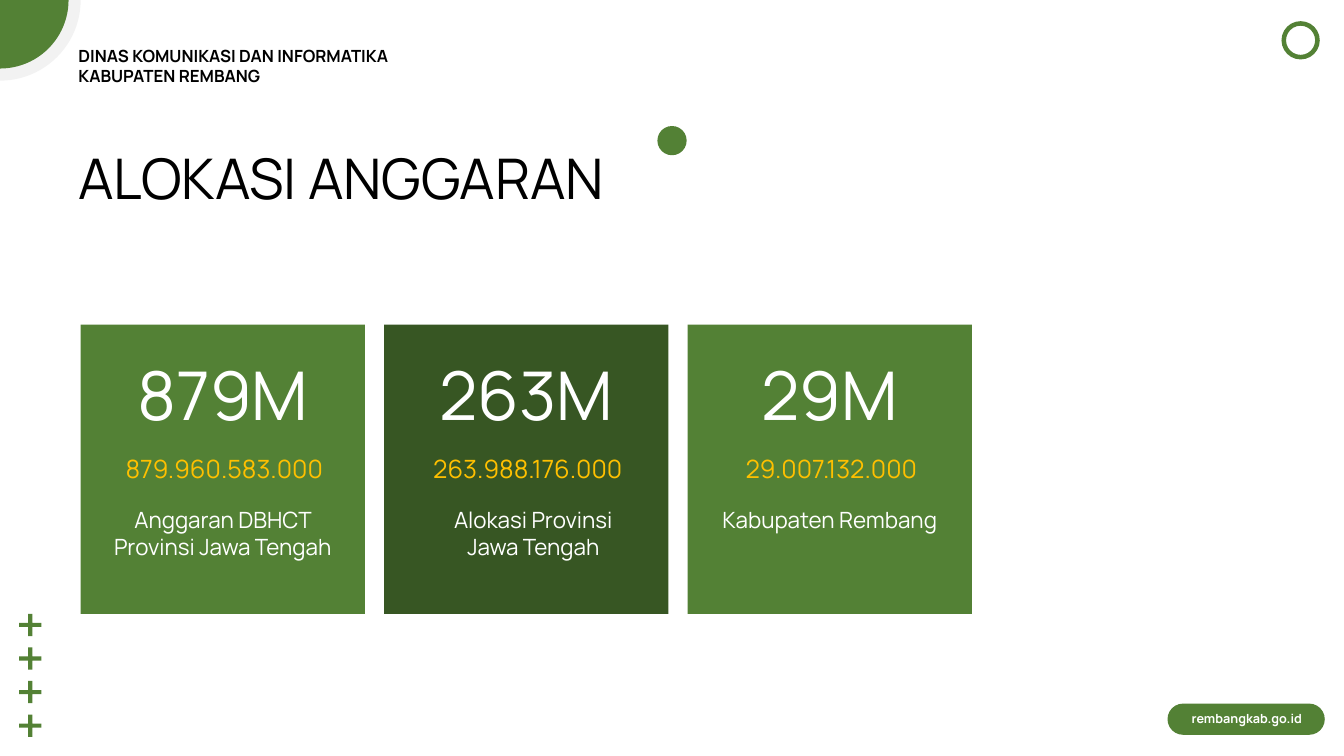
from pptx import Presentation
from pptx.dml.color import RGBColor
from pptx.enum.shapes import MSO_SHAPE
from pptx.enum.text import MSO_AUTO_SIZE, PP_ALIGN
from pptx.util import Inches, Pt

RECTANGLE, PIE, DONUT = MSO_SHAPE.RECTANGLE, MSO_SHAPE.PIE, MSO_SHAPE.DONUT
PLUS, OVAL, PILL = MSO_SHAPE.CROSS, MSO_SHAPE.OVAL, MSO_SHAPE.ROUNDED_RECTANGLE
LEFT, CENTER = PP_ALIGN.LEFT, PP_ALIGN.CENTER
FIT_SHAPE = MSO_AUTO_SIZE.SHAPE_TO_FIT_TEXT

# Content
FONT = "Manrope"
GREEN, DARK_GREEN, GOLD = "538135", "375623", "FFC000"
WHITE, BLACK, PALE_GRAY = "FFFFFF", "000000", "F2F2F2"
AGENCY = ["DINAS KOMUNIKASI DAN INFORMATIKA", "KABUPATEN REMBANG"]
TITLE = ["ALOKASI ANGGARAN"]
WEBSITE = ["rembangkab.go.id"]
# Fill, headline, full amount, caption lines, shift of the caption
CARDS = [
    (GREEN, "879M", "879.960.583.000", ["Anggaran DBHCT Provinsi Jawa Tengah"], 0),
    (DARK_GREEN, "263M", "263.988.176.000", ["Alokasi Provinsi", "Jawa Tengah"], 0.07),
    (GREEN, "29M", "29.007.132.000", ["Kabupaten Rembang"], 0),
]

# Layout in inches
CARD_LEFT, CARD_TOP, CARD_WIDTH, CARD_HEIGHT = 0.8, 3.22, 2.82, 2.87
CARD_STEP = 3.01
CARD_PADDING = 0.18
PLUS_COUNT, PLUS_TOP, PLUS_STEP, PLUS_SIZE = 4, 6.09, 0.333, 0.22

presentation = Presentation()
presentation.slide_width = Inches(13.33)
presentation.slide_height = Inches(7.5)
slide = presentation.slides.add_slide(presentation.slide_layouts[6])


def color(value):
    return RGBColor.from_string(value)


def add_shape(kind, left, top, width, height, fill, adjustments=(), rotation=0):
    shape = slide.shapes.add_shape(
        kind, Inches(left), Inches(top), Inches(width), Inches(height))
    shape.shadow.inherit = False
    shape.fill.solid()
    shape.fill.fore_color.rgb = color(fill)
    shape.line.fill.background()
    shape.rotation = rotation
    for index, value in enumerate(adjustments):
        shape.adjustments[index] = value


def add_text(lines, left, top, width, height, size, text_color,
             alignment=CENTER, bold=False, wrap=True):
    box = slide.shapes.add_textbox(
        Inches(left), Inches(top), Inches(width), Inches(height))
    frame = box.text_frame
    frame.word_wrap = wrap
    frame.auto_size = FIT_SHAPE
    frame.text = "\n".join(lines)
    for paragraph in frame.paragraphs:
        paragraph.alignment = alignment
        paragraph.font.name = FONT
        paragraph.font.size = Pt(size)
        paragraph.font.bold = bold
        paragraph.font.color.rgb = color(text_color)


# Budget cards
for column, (fill, headline, amount, caption, shift) in enumerate(CARDS):
    left = CARD_LEFT + column * CARD_STEP
    text_left = left + CARD_PADDING
    text_width = CARD_WIDTH - 2 * CARD_PADDING
    add_shape(RECTANGLE, left, CARD_TOP, CARD_WIDTH, CARD_HEIGHT, fill)
    add_text([headline], text_left, 3.46, text_width, 0.91, 48, WHITE)
    add_text([amount], text_left, 4.45, text_width + 0.03, 0.4, 18, GOLD)
    add_text(caption, text_left + shift, 4.97, text_width, 0.64, 16, WHITE)

# Corner quarter circles, centred on the slide's corner
for radius, fill in [(0.8, PALE_GRAY), (0.68, GREEN)]:
    add_shape(PIE, -radius, -radius, 2 * radius, 2 * radius, fill, (108, 162), 180)

# Ring and column of plus signs
add_shape(DONUT, 12.71, 0.21, 0.38, 0.38, GREEN, (0.12,))
for row in range(PLUS_COUNT):
    add_shape(PLUS, 0.19, PLUS_TOP + row * PLUS_STEP, PLUS_SIZE, PLUS_SIZE,
              GREEN, (0.409,))

# Agency, title and accent dot
add_text(AGENCY, 0.68, 0.4, 3.42, 0.5, 12, BLACK, LEFT, bold=True, wrap=False)
add_text(TITLE, 0.68, 1.37, 6.05, 0.77, 40, BLACK, LEFT, wrap=False)
add_shape(OVAL, 6.52, 1.25, 0.29, 0.29, GREEN)

# Website badge
add_shape(PILL, 11.58, 6.98, 1.56, 0.31, GREEN, (0.5,))
add_text(WEBSITE, 11.64, 7, 1.45, 0.25, 9, WHITE, bold=True)

presentation.save("out.pptx")
